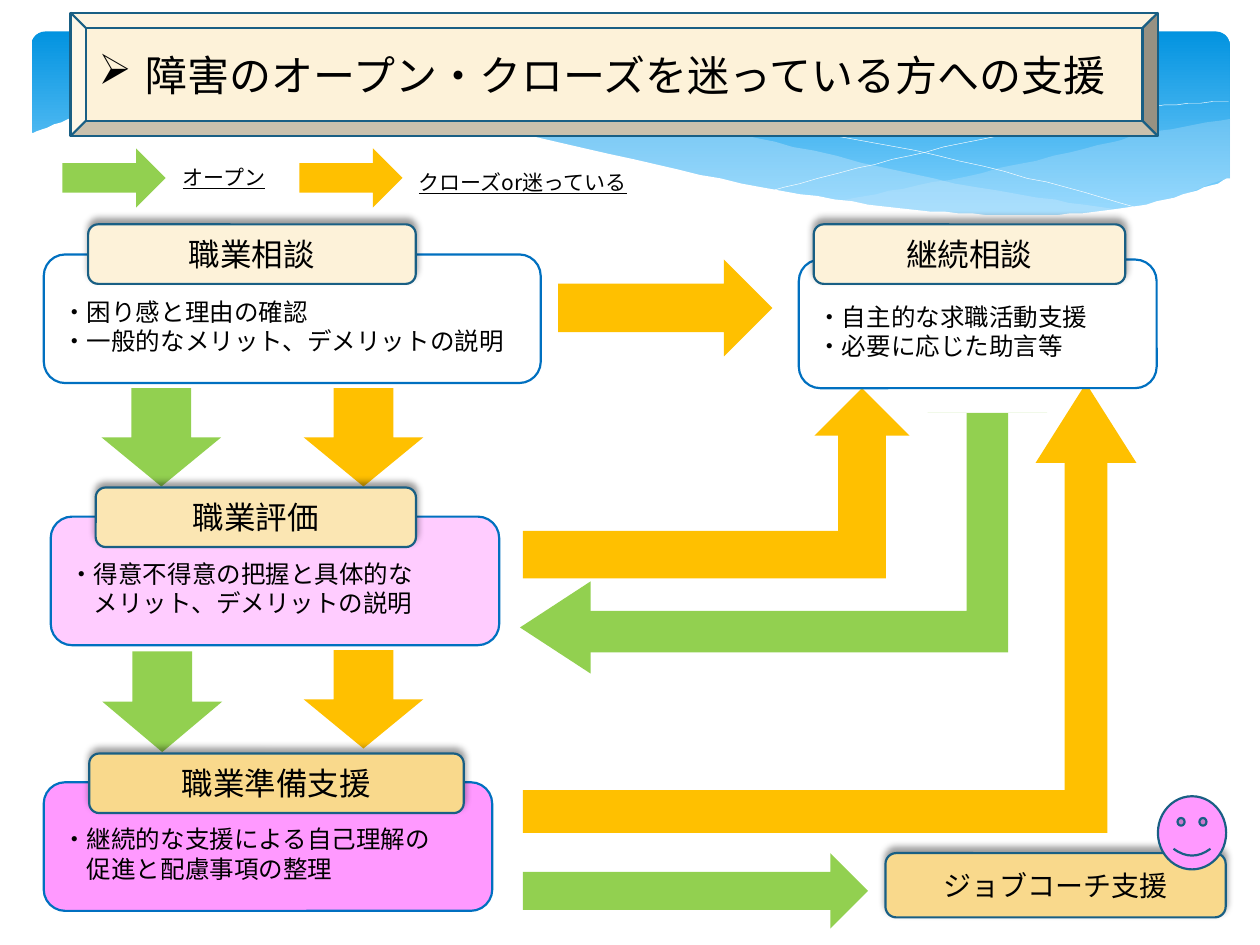
from dataclasses import dataclass

from lxml import etree
from pptx import Presentation
from pptx.dml.color import RGBColor
from pptx.enum.shapes import MSO_SHAPE
from pptx.enum.text import MSO_ANCHOR, MSO_AUTO_SIZE, PP_ALIGN
from pptx.oxml.ns import qn
from pptx.util import Pt


@dataclass(frozen=True)
class Theme:
    font: str = "Noto Sans CJK JP"
    ink: str = "000000"
    white: str = "FFFFFF"
    sky_top: str = "0293E0"
    sky_bottom: str = "83D3FE"
    ribbon: str = "C6E7FC"
    outline: str = "195F84"
    panel_line: str = "0070C0"
    cream: str = "FDF2D9"
    sand: str = "FBE6B3"
    gold: str = "F9D98C"
    pale_pink: str = "FFCCFF"
    pink: str = "FF99FF"
    open_green: str = "92D050"
    closed_orange: str = "FFC000"
    title_size: float = 24
    heading_size: float = 18
    coach_size: float = 16
    body_size: float = 14
    legend_size: float = 12


THEME = Theme()

# Key points of the waves in the header band
WAVE_EDGE = [(16.6, 77), (21, 75), (43, 67), (68, 61), (95, 58), (127, 56.2),
             (180, 58), (245, 66), (322, 82), (400, 100), (467, 112.3), (523, 120),
             (571, 123), (611, 122.5), (655, 116.6), (684, 108.7), (703.4, 101.5)]
RIGHT_RIBBON = ([(702.7, 67.7), (652, 77), (620, 85), (561, 98.6), (508, 109.4), (476, 115.2)],
                [(476, 115.2), (508, 118.8), (545, 122.4), (586, 123.8), (628, 121.7),
                 (663, 115.2), (702.7, 101.5)])
LONG_RIBBON = ([(643, 120.2), (602.6, 114.5), (533.5, 102.2), (453, 83.5), (400, 72),
                (352, 64), (302, 59), (260, 57.6), (206, 62)],
               [(206, 62), (260.6, 69.8), (323, 83.5), (407.5, 103), (468, 113.8),
                (520, 121), (573, 124.6), (610.6, 123.8), (643, 120.2)])
FALLING_LINE = [(222.5, 64.8), (247.7, 60.5), (288.7, 59), (337.7, 59.8), (400, 65.5),
                (458, 74.2), (523.4, 86.4), (598.3, 104.4), (653, 119.5)]
RISING_LINE = [(441.4, 108.7), (500.4, 93.6), (558.7, 79.9), (623.5, 67),
               (665.3, 60.5), (702, 57.6)]


def smooth(points, steps=6):
    """Return a Catmull-Rom curve through the points."""
    padded = [points[0], *points, points[-1]]
    curve = [points[0]]
    for a, b, c, d in zip(padded, padded[1:], padded[2:], padded[3:]):
        for step in range(1, steps + 1):
            t = step / steps
            curve.append(tuple(
                (2 * q + (r - p) * t + (2 * p - 5 * q + 4 * r - s) * t ** 2
                 + (3 * q - p - 3 * r + s) * t ** 3) / 2
                for p, q, r, s in zip(a, b, c, d)))
    return curve


def paint(shape, fill=None, line=None, width=1.25, opacity=None):
    shape.shadow.inherit = False
    if fill:
        shape.fill.solid()
        shape.fill.fore_color.rgb = RGBColor.from_string(fill)
        if opacity:
            color = shape.element.spPr.find(".//" + qn("a:srgbClr"))
            etree.SubElement(color, qn("a:alpha"), val=str(opacity * 1000))
    else:
        shape.fill.background()
    if line:
        shape.line.color.rgb = RGBColor.from_string(line)
        shape.line.width = Pt(width)
    else:
        shape.line.fill.background()


def add_preset(slide, kind, box, fill, line=None, adjustments=()):
    shape = slide.shapes.add_shape(kind, *map(Pt, box))
    for index, value in enumerate(adjustments):
        shape.adjustments[index] = value
    paint(shape, fill, line)
    return shape


def add_outline(slide, points, closed=True, **format_values):
    builder = slide.shapes.build_freeform(*points[0], scale=Pt(1))
    builder.add_line_segments(points[1:], close=closed)
    paint(builder.convert_to_shape(), **format_values)


def add_upward_shadow(shape):
    effects = shape.element.spPr.find(qn("a:effectLst"))
    shadow = etree.SubElement(effects, qn("a:outerShdw"), blurRad=str(Pt(4)), dist=str(Pt(3)),
                              dir="16200000", rotWithShape="0")
    color = etree.SubElement(shadow, qn("a:srgbClr"), val=THEME.ink)
    etree.SubElement(color, qn("a:alpha"), val="40000")


def write(shape, lines, size, alignment=PP_ALIGN.CENTER, hanging=0, underline=None, **frame_values):
    frame = shape.text_frame
    settings = {"word_wrap": True, "vertical_anchor": MSO_ANCHOR.MIDDLE, **frame_values}
    for name, value in settings.items():
        setattr(frame, name, value)
    frame.text = "\n".join(lines)
    for paragraph in frame.paragraphs:
        paragraph.alignment = alignment
        if hanging:
            properties = paragraph._p.get_or_add_pPr()
            properties.set("marL", str(Pt(hanging)))
            properties.set("indent", str(-Pt(hanging)))
        for run in paragraph.runs:
            values = {"name": THEME.font, "size": Pt(size), "underline": underline}
            for name, value in values.items():
                setattr(run.font, name, value)
            run.font.color.rgb = RGBColor.from_string(THEME.ink)
            etree.SubElement(run.font._element, qn("a:ea"), typeface=THEME.font)


def add_header_band(slide, box):
    band = add_preset(slide, MSO_SHAPE.ROUNDED_RECTANGLE, box, THEME.white, adjustments=[0.07])
    band.fill.gradient()
    band.fill.gradient_angle = 270
    stops = zip(band.fill.gradient_stops, (0, 0.9), (THEME.sky_top, THEME.sky_bottom))
    for stop, position, color in stops:
        stop.position = position
        stop.color.rgb = RGBColor.from_string(color)
    for (upper, lower), opacity in ((RIGHT_RIBBON, 29), (LONG_RIBBON, 40)):
        add_outline(slide, smooth(upper) + smooth(lower), fill=THEME.ribbon, opacity=opacity)
    for points in (FALLING_LINE, RISING_LINE):
        add_outline(slide, smooth(points), closed=False, line=THEME.white, width=0.25)
    add_outline(slide, smooth(WAVE_EDGE) + [(703.4, 161), (16.6, 161)], fill=THEME.white)


def add_title(slide, box, text):
    left, top, width, height = box
    add_preset(slide, MSO_SHAPE.BEVEL, box, THEME.cream, THEME.outline)
    title = slide.shapes.title
    slide.shapes.element.append(title.element)
    place = {"left": left + 8.8, "top": top + 17.3, "width": width + 17, "height": 36}
    for name, value in place.items():
        setattr(title, name, Pt(value))
    write(title, [text], THEME.title_size, PP_ALIGN.LEFT, hanging=27,
          auto_size=MSO_AUTO_SIZE.NONE)
    properties = title.text_frame.paragraphs[0]._p.get_or_add_pPr()
    etree.SubElement(properties, qn("a:buFont"), typeface="Wingdings")
    etree.SubElement(properties, qn("a:buChar"), char="Ø")


def add_heading(slide, box, text, fill, size=THEME.heading_size):
    heading = add_preset(slide, MSO_SHAPE.ROUNDED_RECTANGLE, box, fill, THEME.outline)
    add_upward_shadow(heading)
    write(heading, [text], size)


def add_step(slide, box, heading_box, heading, heading_fill, lines, fill):
    panel = add_preset(slide, MSO_SHAPE.ROUNDED_RECTANGLE, box, fill, THEME.panel_line)
    write(panel, lines, THEME.body_size, PP_ALIGN.LEFT, hanging=THEME.body_size,
          vertical_anchor=MSO_ANCHOR.TOP, margin_top=Pt(20.5))
    add_heading(slide, heading_box, heading, heading_fill)


def add_legend_item(slide, arrow_left, color, label_box, label):
    add_preset(slide, MSO_SHAPE.RIGHT_ARROW, (arrow_left, 84.8, 59, 33.8), color)
    write(slide.shapes.add_textbox(*map(Pt, label_box)), [label], THEME.legend_size,
          underline=True)


def add_flow_arrows(slide):
    green, orange = THEME.open_green, THEME.closed_orange
    down, bent = MSO_SHAPE.DOWN_ARROW, MSO_SHAPE.BENT_UP_ARROW
    arrows = [
        (MSO_SHAPE.RIGHT_ARROW, (319, 148.3, 122.4, 55.4), orange, ()),
        (down, (58, 221.8, 68.4, 56.2), green, ()),
        (down, (173.5, 221.8, 68.4, 56.2), orange, ()),
        (down, (58.5, 372.2, 68.4, 57.6), green, ()),
        (down, (173.5, 371.5, 68.4, 56.2), orange, ()),
        (bent, (298.8, 221.8, 221, 108.7), orange, ()),
        (bent, (298.8, 219, 350.6, 257), orange, (0.095, 0.112, 0.177)),
        (bent, (319, 236, 279.4, 136.8), green, (0.173, 0.25, 0)),
        (MSO_SHAPE.RIGHT_ARROW, (298.8, 487.5, 197.3, 43.2), green, ()),
    ]
    for kind, box, color, adjustments in arrows:
        add_preset(slide, kind, box, color, adjustments=adjustments)
    arrowhead = add_preset(slide, MSO_SHAPE.ISOSCELES_TRIANGLE, (291, 338.4, 52.6, 40.3), green)
    arrowhead.rotation = 270


def main():
    presentation = Presentation()
    presentation.slide_width, presentation.slide_height = Pt(720), Pt(540)
    slide = presentation.slides.add_slide(presentation.slide_layouts[5])
    add_header_band(slide, (18, 18, 684.7, 112.3))
    add_title(slide, (40.3, 7.2, 621.4, 70.6), "障害のオープン・クローズを迷っている方への支援")
    add_legend_item(slide, 35.7, THEME.open_green, (91.4, 82.8, 73.4, 36.7), "オープン")
    add_legend_item(slide, 171, THEME.closed_orange, (230.4, 85.7, 136.8, 36.7),
                    "クローズor迷っている")
    add_flow_arrows(slide)
    add_step(slide, (25, 145.4, 284, 73.5), (50.4, 128.2, 187.2, 34), "職業相談", THEME.cream,
             ["・困り感と理由の確認", "・一般的なメリット、デメリットの説明"], THEME.white)
    add_step(slide, (456.5, 148.3, 204.5, 73.5), (465, 128.2, 178, 34), "継続相談", THEME.cream,
             ["・自主的な求職活動支援", "・必要に応じた助言等"], THEME.white)
    add_step(slide, (29, 295.2, 256.3, 73.5), (54.7, 278.6, 183, 34), "職業評価", THEME.sand,
             ["・得意不得意の把握と具体的な\vメリット、デメリットの説明"], THEME.pale_pink)
    add_step(slide, (25, 447, 256.3, 73.5), (51, 430.6, 214, 34), "職業準備支援", THEME.gold,
             ["・継続的な支援による自己理解の\v促進と配慮事項の整理"], THEME.pink)
    add_heading(slide, (506, 487.5, 194.4, 36.7), "ジョブコーチ支援", THEME.gold, THEME.coach_size)
    add_preset(slide, MSO_SHAPE.SMILEY_FACE, (661.7, 455, 39, 41.8), THEME.pink, THEME.outline)
    presentation.save("out.pptx")


if __name__ == "__main__":
    main()
